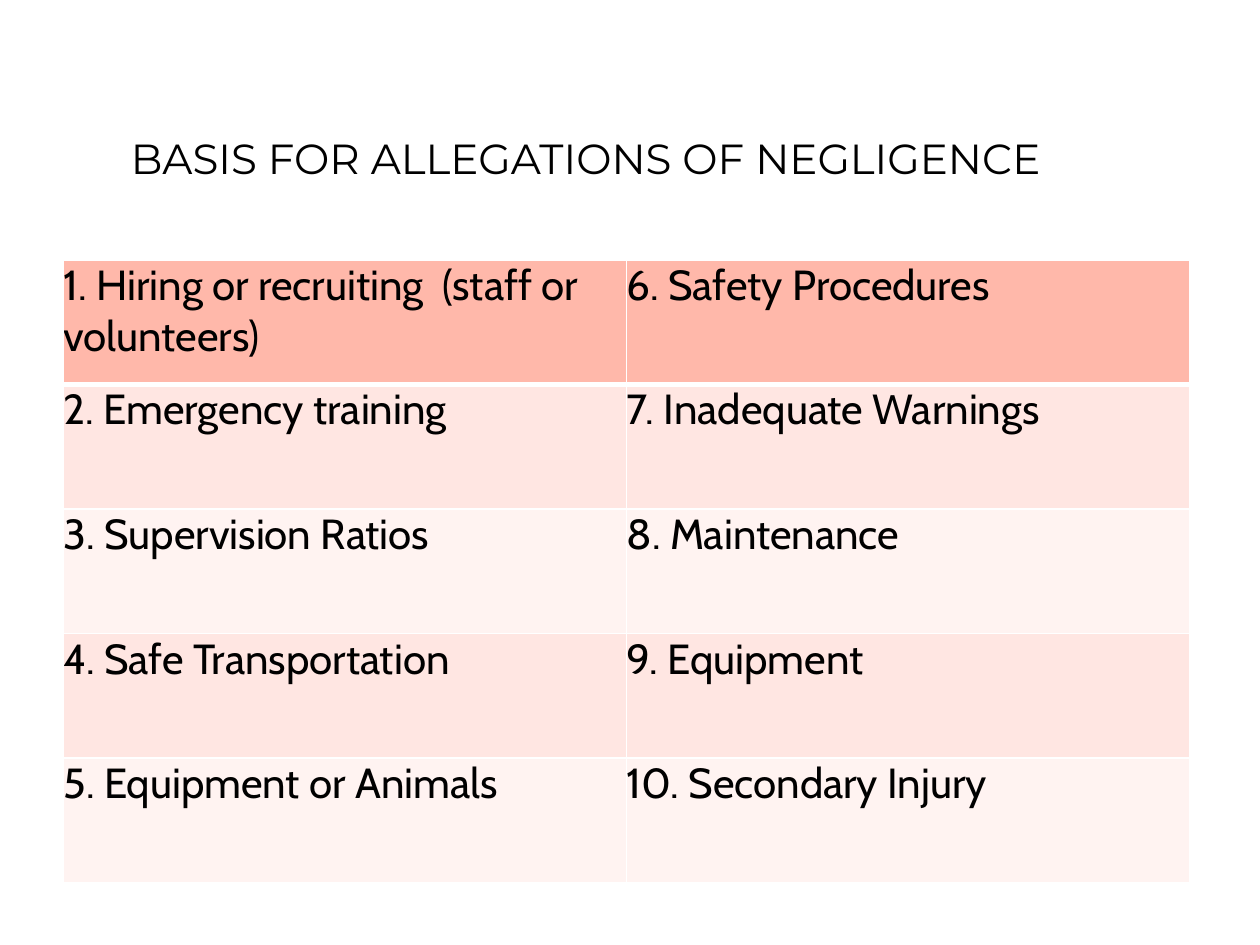
from lxml import etree
from pptx import Presentation
from pptx import util as u
from pptx.dml import color
from pptx.enum import text
from pptx.oxml import ns

COLOURS = {"ink": "000000", "rule": "FFFFFF", "header": "FFB8AA",
           "odd": "FFE6E2", "even": "FFF3F1"}
ALLEGATIONS = [
    ("1. Hiring or recruiting  (staff or volunteers)", "6. Safety Procedures"),
    ("2. Emergency training", "7. Inadequate Warnings"),
    ("3. Supervision Ratios", "8. Maintenance"),
    ("4. Safe Transportation", "9. Equipment"),
    ("5. Equipment or Animals", "10. Secondary Injury"),
]


def rgb(name):
    """Return the named colour."""
    return color.RGBColor.from_string(COLOURS[name])


def apply(target, values):
    """Set each attribute in values on the target."""
    for name, value in values.items():
        setattr(target, name, value)


def write(para, words, font_name):
    """Add one formatted span of words to a paragraph."""
    span = para.add_run()
    span.text = words
    apply(span.font, {"name": font_name, "size": u.Pt(24), "bold": False})
    span.font.color.rgb = rgb("ink")


def add_borders(cell, widths):
    """Draw the cell's borders, given widths in points by side."""
    properties = cell._tc.get_or_add_tcPr()
    for side, width in widths.items():
        line = etree.SubElement(properties, ns.qn(f"a:ln{side}"), w=str(u.Pt(width)))
        fill = etree.SubElement(line, ns.qn("a:solidFill"))
        etree.SubElement(fill, ns.qn("a:srgbClr"), val=COLOURS["rule"])


def place_title(page, left, top, width, height):
    """Place the heading in the title placeholder."""
    title = page.shapes.title
    apply(title, {"left": left, "top": top, "width": width, "height": height})
    frame = title.text_frame
    apply(frame, {"vertical_anchor": text.MSO_ANCHOR.BOTTOM, "word_wrap": True,
                  "auto_size": text.MSO_AUTO_SIZE.NONE,
                  "margin_left": u.Cm(0.25), "margin_right": u.Cm(0.25),
                  "margin_top": u.Cm(0.13), "margin_bottom": u.Cm(0.13)})
    para = frame.paragraphs[0]
    para.alignment = text.PP_ALIGN.CENTER
    write(para, "BASIS FOR ALLEGATIONS OF NEGLIGENCE ", "Montserrat")


def place_table(page, left, top, width, height):
    """Place the table of allegations, a tinted header row above banded rows."""
    table = page.shapes.add_table(len(ALLEGATIONS), len(ALLEGATIONS[0]),
                                  left, top, width, height).table
    for row, entries in enumerate(ALLEGATIONS):
        tint = "header" if row == 0 else "odd" if row % 2 else "even"
        widths = {"L": 1, "R": 1, "T": 3 if row == 1 else 1, "B": 3 if row == 0 else 1}
        for column, words in enumerate(entries):
            cell = table.cell(row, column)
            apply(cell, {"margin_left": 0, "margin_right": 0,
                         "margin_top": 0, "margin_bottom": 0})
            add_borders(cell, widths)
            cell.fill.solid()
            cell.fill.fore_color.rgb = rgb(tint)
            write(cell.text_frame.paragraphs[0], words, "Cabin")


def main():
    """Build and save the deck."""
    deck = Presentation()
    apply(deck, {"slide_width": u.Cm(25.4), "slide_height": u.Cm(19.05)})
    page = deck.slides.add_slide(deck.slide_layouts[5])
    place_title(page, u.Cm(1.12), u.Cm(0.64), u.Cm(21.59), u.Cm(3.18))
    place_table(page, u.Cm(1.28), u.Cm(5.24), u.Cm(22.7), u.Cm(12.55))
    deck.save("out.pptx")


if __name__ == "__main__":
    main()
